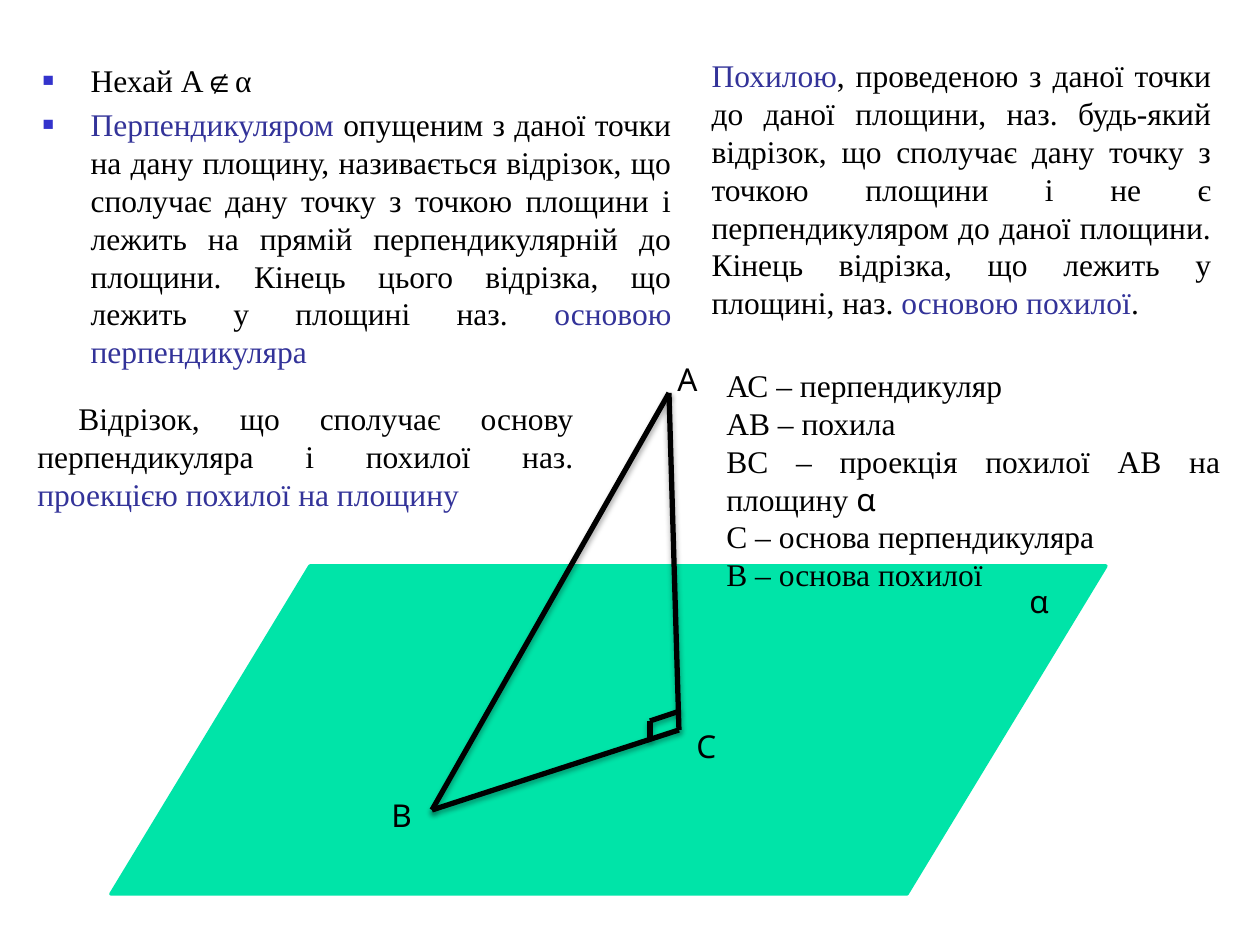
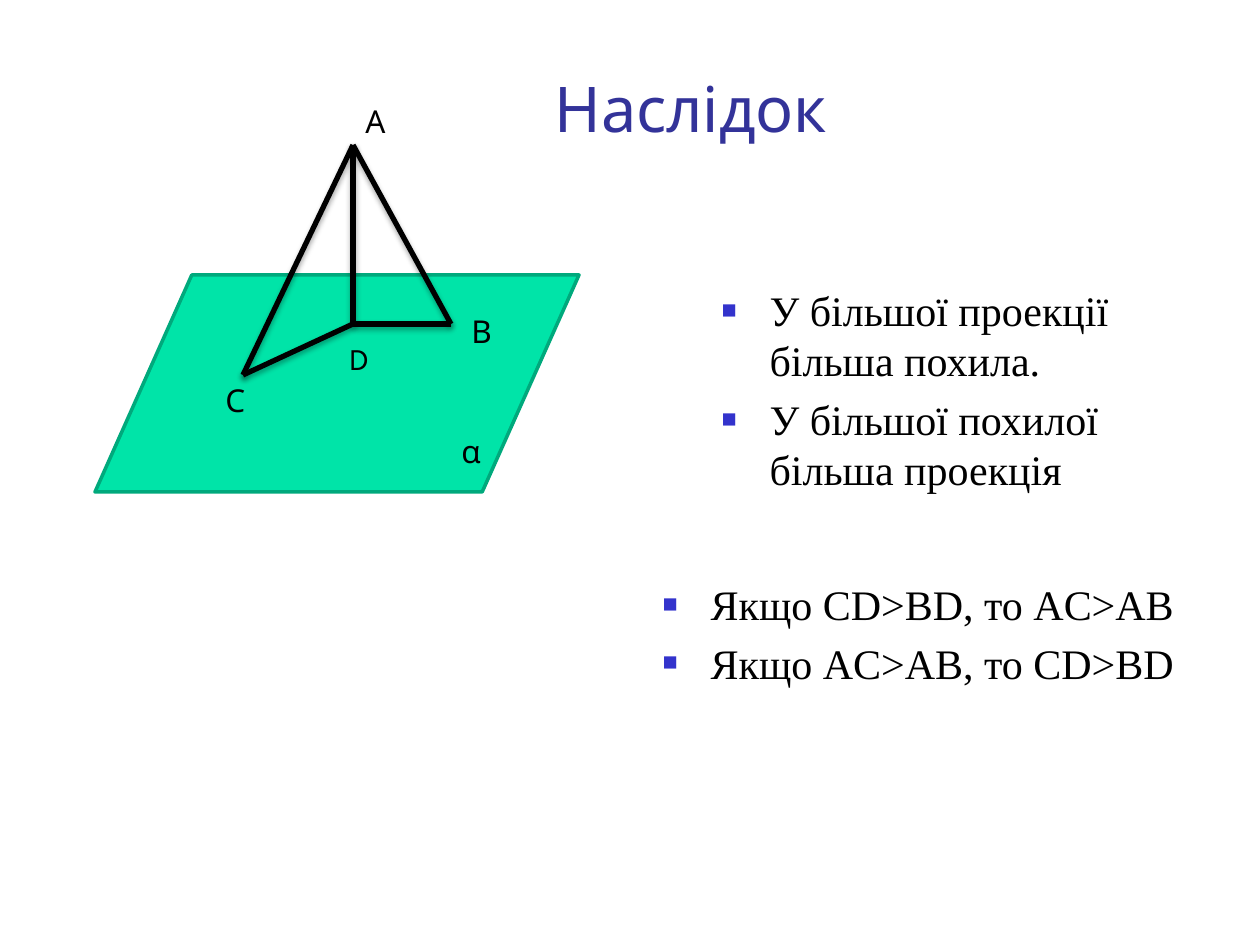
from lxml import etree
from pptx import Presentation
from pptx.dml.color import RGBColor
from pptx.enum.dml import MSO_THEME_COLOR
from pptx.enum.shapes import MSO_CONNECTOR, MSO_SHAPE
from pptx.enum.text import MSO_ANCHOR, MSO_AUTO_SIZE, PP_ALIGN
from pptx.oxml import parse_xml
from pptx.oxml.ns import nsdecls, qn
from pptx.util import Emu, Pt

LEFT, CENTER, JUSTIFY = PP_ALIGN.LEFT, PP_ALIGN.CENTER, PP_ALIGN.JUSTIFY
STRAIGHT, PLANE = MSO_CONNECTOR.STRAIGHT, MSO_SHAPE.FLOWCHART_DATA
NO_FIT, GROW = MSO_AUTO_SIZE.NONE, MSO_AUTO_SIZE.SHAPE_TO_FIT_TEXT
BOTTOM = MSO_ANCHOR.BOTTOM

BLACK, BLUE, BULLET = "000000", "333399", "3333CC"
GREEN, DARK_GREEN = "00E4A8", "00A97C"
SANS, SERIF = "Karla", "Times New Roman"
HANGING = 48
LABEL_W, LABEL_H = 45, 50

PERPENDICULAR = [
    ["Нехай А∉α"],
    [("Перпендикуляром ", BLUE),
     "опущеним з даної точки на дану площину, називається відрізок, що сполучає "
     "дану точку з точкою площини і лежить на прямій перпендикулярній до площини. "
     "Кінець цього відрізка, що лежить у площині наз. ",
     ("основою перпендикуляра", BLUE)],
]
OBLIQUE = [
    [("Похилою", BLUE),
     ", проведеною з даної точки до даної площини, наз. будь-який відрізок, що "
     "сполучає дану точку з точкою площини і не є перпендикуляром до даної "
     "площини. Кінець відрізка, що лежить у площині, наз. ",
     ("основою похилої", BLUE), "."],
]
PROJECTION = [
    ["Відрізок, що сполучає основу перпендикуляра і похилої наз. ",
     ("проекцією похилої на площину", BLUE)],
]
NOTATION = [
    ["АС – перпендикуляр"],
    ["АВ – похила"],
    ["ВС – проекція похилої АВ на площину ", ("α", BLACK, SANS)],
    ["С – основа перпендикуляра"],
    ["В – основа похилої"],
]
COROLLARY = [["У більшої проекції більша похила."],
             ["У більшої похилої більша проекція"]]
FORMULAS = [["Якщо CD>BD, то AC>AB"], ["Якщо AC>AB, то CD>BD"]]

TRIANGLE = {
    "plane": (111, 566, 995, 328),
    "edge": GREEN,
    "points": {"A": (669, 393), "B": (432, 810), "C": (679, 730),
               "P": (650, 740), "Q": (650, 721), "R": (680, 711)},
    "segments": ["CA", "AB", "BC", "PQ", "QR"],
    "labels": {"α": (1017, 576), "А": (665, 354), "В": (379, 790), "С": (684, 721)},
}
TWO_OBLIQUES = {
    "plane": (95, 275, 484, 217),
    "edge": DARK_GREEN,
    "points": {"A": (353, 145), "B": (451, 324), "C": (243, 375), "D": (353, 324)},
    "segments": ["AB", "AD", "DB", "AC", "CD"],
    "labels": {"А": (353, 96), "В": (459, 306), "С": (213, 375),
               "D": (336, 333), "α": (449, 426)},
}


def px(n):
    return Emu(n * 914400 // 126)


def color(value):
    return RGBColor.from_string(value)


def set_bullet(p, bullet):
    pPr = p._p.get_or_add_pPr()
    if not bullet:
        etree.SubElement(pPr, qn("a:buNone"))
        return
    clr = etree.SubElement(pPr, qn("a:buClr"))
    etree.SubElement(clr, qn("a:srgbClr"), val=BULLET)
    etree.SubElement(pPr, qn("a:buSzPct"), val="60000")
    etree.SubElement(pPr, qn("a:buChar"), char="■")


def write(sp, paragraphs, size=18, font=SERIF, fill=BLACK, align=LEFT,
          bullet=False, first_indent=0, wrap=True, fit=NO_FIT):
    tf = sp.text_frame
    tf.word_wrap = wrap
    tf.auto_size = fit
    for i, runs in enumerate(paragraphs):
        p = tf.paragraphs[0] if i == 0 else tf.add_paragraph()
        p.alignment = align
        pPr = p._p.get_or_add_pPr()
        pPr.set("marL", str(px(HANGING if bullet else 0)))
        pPr.set("indent", str(px(-HANGING if bullet else first_indent)))
        set_bullet(p, bullet)
        for run in runs:
            text, *look = (run,) if isinstance(run, str) else run
            r = p.add_run()
            r.text = text
            r.font.size = Pt(size)
            r.font.color.rgb = color(look[0] if look else fill)
            r.font.name = look[1] if len(look) > 1 else font


def place(sp, box):
    sp.left, sp.top, sp.width, sp.height = map(px, box)
    return sp


def text_box(s, box, paragraphs, **fmt):
    sp = s.shapes.add_textbox(*map(px, box))
    write(sp, paragraphs, fit=GROW, **fmt)


def segment(s, start, end):
    line = s.shapes.add_connector(STRAIGHT, *map(px, start + end))
    line.line.color.rgb = color(BLACK)
    line.line.width = Pt(3)
    line._element.spPr.append(parse_xml(
        f'<a:effectLst {nsdecls("a")}><a:outerShdw blurRad="40000" dist="23000" '
        'dir="5400000" rotWithShape="0"><a:srgbClr val="000000">'
        '<a:alpha val="35000"/></a:srgbClr></a:outerShdw></a:effectLst>'))


def draw(s, figure):
    plane = s.shapes.add_shape(PLANE, *map(px, figure["plane"]))
    plane.shadow.inherit = False
    plane.fill.solid()
    plane.fill.fore_color.rgb = color(GREEN)
    plane.line.color.rgb = color(figure["edge"])
    plane.line.width = Pt(2)
    points = figure["points"]
    for start, end in figure["segments"]:
        segment(s, points[start], points[end])
    for name, corner in figure["labels"].items():
        text_box(s, corner + (LABEL_W, LABEL_H), [[name]], font=SANS, wrap=False)


def definitions_slide(prs):
    s = prs.slides.add_slide(prs.slide_layouts[3])
    title, left, right = s.placeholders
    title._element.getparent().remove(title._element)
    write(place(right, (699, 50, 525, 373)), OBLIQUE, align=JUSTIFY)
    write(place(left, (30, 55, 654, 396)), PERPENDICULAR, align=JUSTIFY, bullet=True)
    draw(s, TRIANGLE)
    text_box(s, (25, 393, 561, 131), PROJECTION, align=JUSTIFY, first_indent=41)
    text_box(s, (714, 360, 519, 242), NOTATION, align=JUSTIFY)


def corollary_slide(prs):
    s = prs.slides.add_slide(prs.slide_layouts[3])
    title, upper, lower = s.placeholders
    write(place(title, (154, 45, 1074, 106)), [["Наслідок"]],
          size=36, font=SANS, fill=BLUE, align=CENTER)
    title.text_frame.vertical_anchor = BOTTOM
    write(place(upper, (709, 278, 525, 273)), COROLLARY, size=24, bullet=True)
    write(place(lower, (650, 572, 585, 273)), FORMULAS, size=24, bullet=True)
    draw(s, TWO_OBLIQUES)


def main():
    prs = Presentation()
    prs.slide_width, prs.slide_height = px(1260), px(945)
    background = prs.slide_master.background.fill
    background.solid()
    background.fore_color.theme_color = MSO_THEME_COLOR.BACKGROUND_1
    definitions_slide(prs)
    corollary_slide(prs)
    prs.save("out.pptx")


if __name__ == "__main__":
    main()
